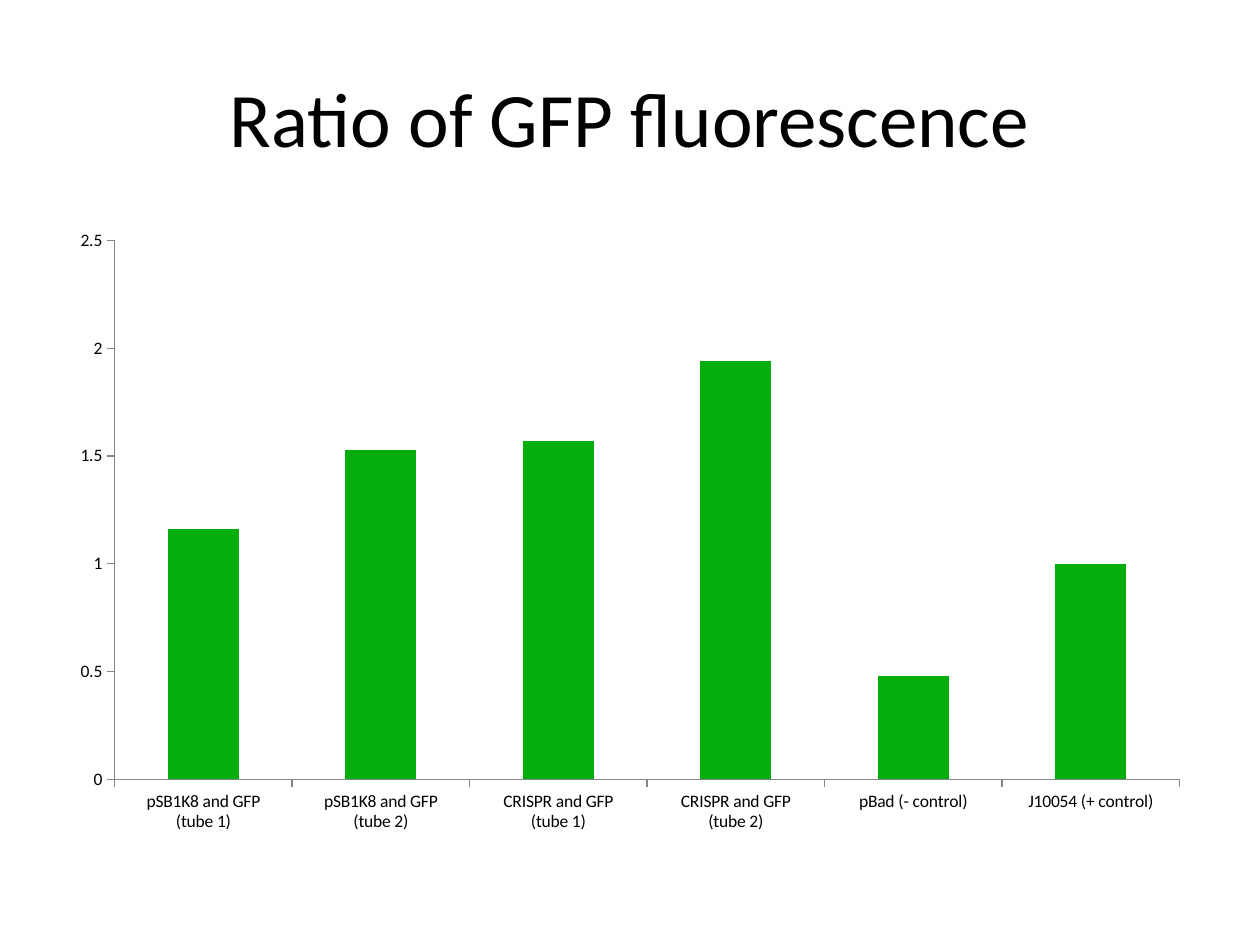
from lxml import etree
from pptx import Presentation
from pptx.chart.data import CategoryChartData
from pptx.dml.color import RGBColor
from pptx.enum.chart import XL_CHART_TYPE as CT, XL_TICK_MARK as TM
from pptx.enum.text import MSO_ANCHOR as MA, PP_ALIGN as PA
from pptx.oxml.ns import qn
from pptx.util import Cm, Pt


def rgb(code):
    return RGBColor.from_string(code)


def style(obj, fmt):
    for name, value in fmt.items():
        setattr(obj, name, value)


prs = Presentation()
style(prs, {"slide_width": Cm(25.4), "slide_height": Cm(19.05)})
s = prs.slides.add_slide(prs.slide_layouts[6])

sp = s.shapes.add_textbox(Cm(1.27), Cm(0.76), Cm(22.86), Cm(3.18))
tf = sp.text_frame
style(tf, {"word_wrap": True, "vertical_anchor": MA.MIDDLE})
p = tf.paragraphs[0]
p.alignment = PA.CENTER
r = p.add_run()
r.text = "Ratio of GFP fluorescence"
style(r.font, {"name": "Calibri", "size": Pt(44)})
r.font.color.rgb = rgb("000000")

ratios = {
    "pSB1K8 and GFP\n(tube 1)": 1.16,
    "pSB1K8 and GFP\n(tube 2)": 1.53,
    "CRISPR and GFP\n(tube 1)": 1.57,
    "CRISPR and GFP\n(tube 2)": 1.94,
    "pBad (- control)": 0.48,
    "J10054 (+ control)": 1,
}
data = CategoryChartData()
data.categories = list(ratios)
data.add_series("Series 1", list(ratios.values()))
width, height = Cm(22.86), Cm(12.57)
chart = s.shapes.add_chart(
    CT.COLUMN_CLUSTERED, Cm(1.27), Cm(4.45), width, height, data
).chart
style(chart, {"has_legend": False, "has_title": False})
style(chart.font, {"name": "Calibri", "size": Pt(10)})
chart.font.color.rgb = rgb("000000")

plot = chart.plots[0]
style(plot, {"gap_width": 150, "vary_by_categories": False})
fill = plot.series[0].format.fill
fill.solid()
fill.fore_color.rgb = rgb("03AD0B")

for axis in (chart.category_axis, chart.value_axis):
    style(axis, {"has_major_gridlines": False, "major_tick_mark": TM.OUTSIDE,
                 "minor_tick_mark": TM.NONE})
    axis.format.line.color.rgb = rgb("868686")
style(chart.value_axis, {"minimum_scale": 0, "maximum_scale": 2.5, "major_unit": 0.5})
style(chart.value_axis.tick_labels, {"number_format": "General",
                                     "number_format_is_linked": False})

area = chart.element.find(".//" + qn("c:plotArea"))
for old in area.findall(qn("c:layout")):
    area.remove(old)
layout = etree.Element(qn("c:layout"))
area.insert(0, layout)
manual = etree.SubElement(layout, qn("c:manualLayout"))
places = {"layoutTarget": "inner", "xMode": "edge", "yMode": "edge",
          "x": Cm(1.04) / width, "y": Cm(0.4) / height,
          "w": Cm(21.47) / width, "h": Cm(10.86) / height}
for tag, value in places.items():
    etree.SubElement(manual, qn("c:" + tag)).set("val", str(value))

prs.save("out.pptx")
